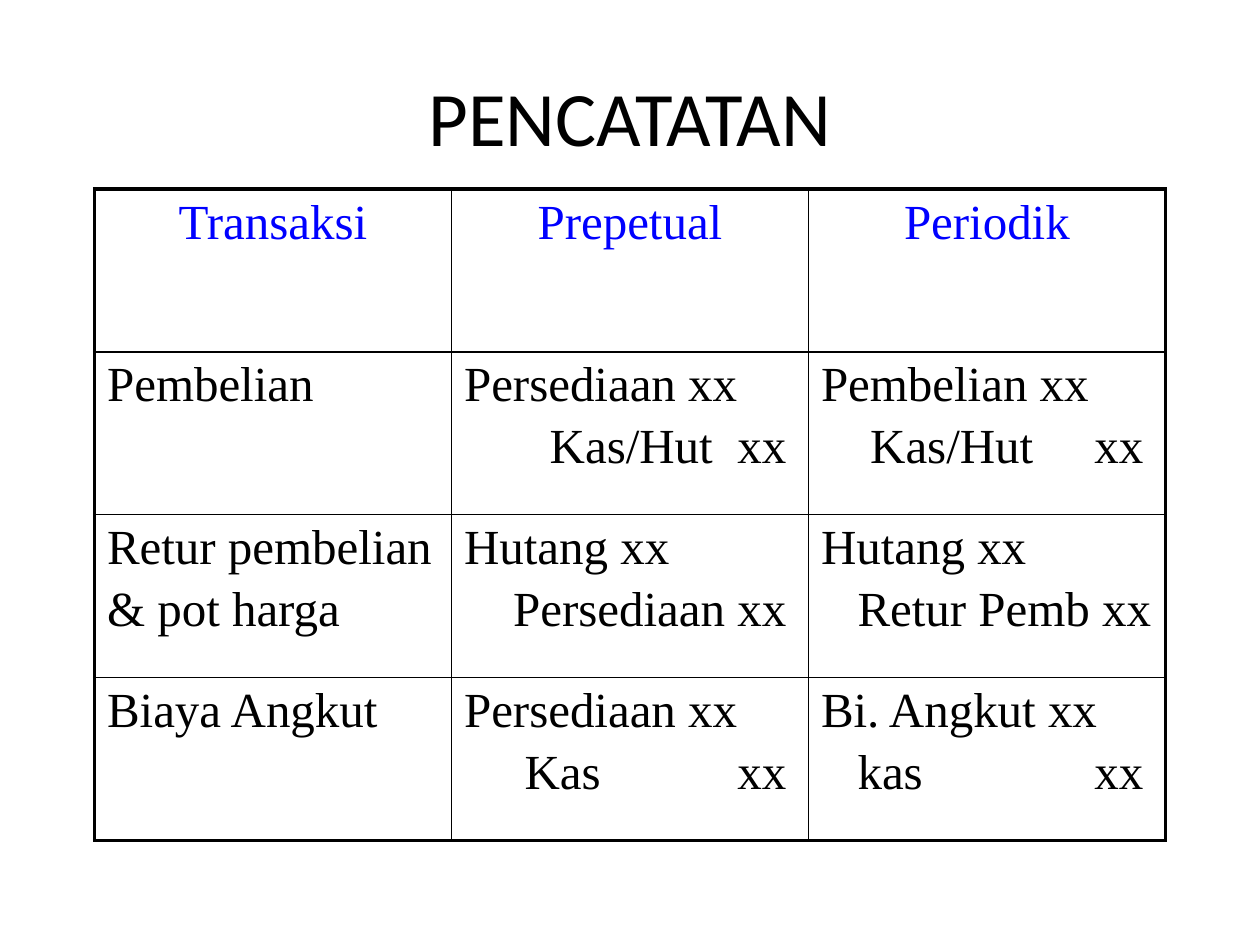
import pptx
import pptx.dml.color
import pptx.enum.text
import pptx.util
import lxml.etree
from pptx.oxml.ns import qn

INK = {"text": "000000", "head": "0000FF", "back": "FFFFFF"}
ALIGN = pptx.enum.text.PP_ALIGN
HEADS = ["Transaksi", "Prepetual", "Periodik"]
ROWS = [
    [["Pembelian"],
     ["Persediaan xx", ("\tKas/Hut\txx", 0.68, 2.17)],
     ["Pembelian xx", ("\tKas/Hut\txx", 0.39, 2.17)]],
    [["Retur pembelian", "& pot harga"],
     ["Hutang xx", ("\tPersediaan xx", 0.39)],
     ["Hutang xx", ("\tRetur Pemb xx", 0.29)]],
    [["Biaya Angkut"],
     ["Persediaan xx", ("\tKas\txx", 0.48, 2.17)],
     ["Bi. Angkut xx", ("\tkas\txx", 0.29, 2.17)]],
]


def color(name):
    return pptx.dml.color.RGBColor.from_string(INK[name])


class Deck:
    def __init__(self, wide, high):
        self.file = pptx.Presentation()
        self.file.slide_width = pptx.util.Inches(wide)
        self.file.slide_height = pptx.util.Inches(high)
        self.slide = self.file.slides.add_slide(self.file.slide_layouts[5])

    def box(self, left, top, width, height):
        wide, high = self.file.slide_width, self.file.slide_height
        return [round(part * size) for part, size in
                zip((left, top, width, height), (wide, high, wide, high))]

    def run(self, para, text, font, size, ink):
        run = para.add_run()
        run.text = text
        run.font.name = font
        run.font.size = pptx.util.Pt(size)
        run.font.color.rgb = color(ink)

    def title(self, text, *area):
        shape = self.slide.shapes.title
        shape.left, shape.top, shape.width, shape.height = self.box(*area)
        shape.text_frame.vertical_anchor = pptx.enum.text.MSO_ANCHOR.MIDDLE
        para = shape.text_frame.paragraphs[0]
        para.alignment = ALIGN.CENTER
        self.run(para, text, "Calibri", 44, "text")

    def tabs(self, para, stops):
        group = lxml.etree.SubElement(para._p.get_or_add_pPr(), qn("a:tabLst"))
        for stop in stops:
            lxml.etree.SubElement(group, qn("a:tab"), algn="l",
                                  pos=str(pptx.util.Inches(stop)))

    def edge(self, cell, side, width):
        line = lxml.etree.SubElement(cell._tc.get_or_add_tcPr(), qn("a:ln" + side),
                                     w=str(pptx.util.Pt(width)))
        fill = lxml.etree.SubElement(line, qn("a:solidFill"))
        lxml.etree.SubElement(fill, qn("a:srgbClr"), val=INK["text"])

    def cell(self, cell, lines, ink, align, outer):
        for side in "LRTB":
            self.edge(cell, side, 2.25 if side in outer else 1)
        cell.fill.solid()
        cell.fill.fore_color.rgb = color("back")
        frame = cell.text_frame
        for i, line in enumerate(lines):
            para = frame.add_paragraph() if i else frame.paragraphs[0]
            para.alignment = align
            para.space_before = pptx.util.Pt(4.4)
            text, *stops = [line] if isinstance(line, str) else line
            if stops:
                self.tabs(para, stops)
            self.run(para, text, "Times New Roman", 28, ink)

    def table(self, heads, rows, *area):
        data = [[[head] for head in heads]] + rows
        tall, wide = len(data), len(heads)
        grid = self.slide.shapes.add_table(tall, wide, *self.box(*area)).table
        grid.first_row = grid.horz_banding = False
        for r, row in enumerate(data):
            for c, lines in enumerate(row):
                ends = {"L": c == 0, "R": c == wide - 1,
                        "T": r == 0, "B": r == tall - 1}
                outer = [side for side, end in ends.items() if end]
                ink, align = ("text", ALIGN.LEFT) if r else ("head", ALIGN.CENTER)
                self.cell(grid.cell(r, c), lines, ink, align, outer)


def main():
    deck = Deck(10, 7.5)
    deck.title("PENCATATAN", 0.075, 0.33 / 7.5, 0.85, 1.17 / 7.5)
    deck.table(HEADS, ROWS, 0.075, 0.2, 0.85, 5.17 / 7.5)
    deck.file.save("out.pptx")


if __name__ == "__main__":
    main()
